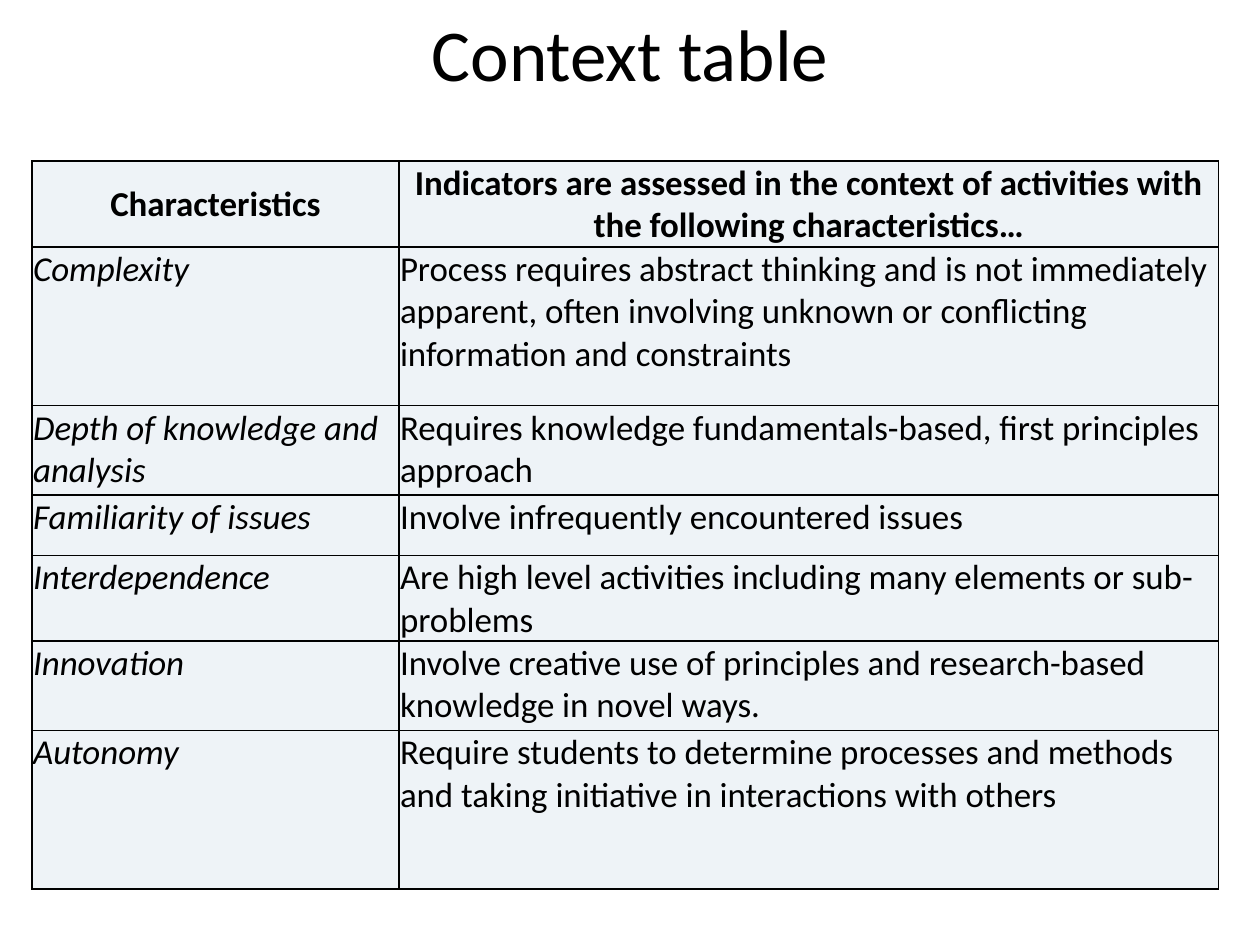
from pptx import Presentation
from pptx.dml.color import RGBColor
from pptx.enum.text import MSO_ANCHOR, PP_ALIGN
from pptx.oxml import parse_xml
from pptx.oxml.ns import nsdecls
from pptx.util import Cm, Inches, Pt

COLORS = {"text": "000000", "border": "000000", "cell": "EEF3F7"}
FONT = "Calibri"
COLS = [3.21, 7.17]
ROWS = [0.75, 1.39, 0.78, 0.53, 0.75, 0.78, 1.39]
CONTENT = [
    ("Characteristics",
     "Indicators are assessed in the context of activities with the following characteristics…"),
    ("Complexity",
     "Process requires abstract thinking and is not immediately apparent, "
     "often involving unknown or conflicting information and constraints"),
    ("Depth of knowledge and analysis",
     "Requires knowledge fundamentals-based, first principles approach"),
    ("Familiarity of issues", "Involve infrequently encountered issues"),
    ("Interdependence",
     "Are high level activities including many elements or sub-problems"),
    ("Innovation",
     "Involve creative use of principles and research-based knowledge in novel ways."),
    ("Autonomy",
     "Require students to determine processes and methods "
     "and taking initiative in interactions with others"),
]


def set_text(p, text, size):
    p.text = text
    p.font.name = FONT
    p.font.size = Pt(size)
    p.font.color.rgb = RGBColor.from_string(COLORS["text"])


def add_borders(cell):
    tcPr = cell._tc.get_or_add_tcPr()
    for i, side in enumerate(("lnL", "lnR", "lnT", "lnB")):
        tcPr.insert(i, parse_xml(
            f'<a:{side} {nsdecls("a")} w="{Pt(1)}"><a:solidFill>'
            f'<a:srgbClr val="{COLORS["border"]}"/></a:solidFill></a:{side}>'))


prs = Presentation()
prs.slide_width, prs.slide_height = Cm(28), Cm(21)
s = prs.slides.add_slide(prs.slide_layouts[6])

# Title, centred across the slide
margin = prs.slide_width * 0.05
sp = s.shapes.add_textbox(int(margin), Inches(0.04),
                          int(prs.slide_width - 2 * margin), Inches(1.14))
tf = sp.text_frame
tf.word_wrap = True
tf.vertical_anchor = MSO_ANCHOR.TOP
tf.margin_left = tf.margin_right = Inches(0.07)
tf.margin_top = tf.margin_bottom = Inches(0.03)
p = tf.paragraphs[0]
set_text(p, "Context table", 46)
p.alignment = PP_ALIGN.CENTER

# Table grid
table = s.shapes.add_table(len(ROWS), len(COLS), Inches(0.28), Inches(1.41),
                           Inches(sum(COLS)), Inches(sum(ROWS))).table
table.horz_banding = False
for column, width in zip(table.columns, COLS):
    column.width = Inches(width)
for row, height in zip(table.rows, ROWS):
    row.height = Inches(height)

# Cells: bold centred header, italic first column
for r, texts in enumerate(CONTENT):
    for c, text in enumerate(texts):
        cell = table.cell(r, c)
        cell.fill.solid()
        cell.fill.fore_color.rgb = RGBColor.from_string(COLORS["cell"])
        cell.margin_left = cell.margin_right = cell.margin_top = Inches(0.01)
        cell.margin_bottom = 0
        add_borders(cell)
        p = cell.text_frame.paragraphs[0]
        set_text(p, text, 22)
        p.font.bold = r == 0
        p.font.italic = r > 0 and c == 0
        p.alignment = PP_ALIGN.CENTER if r == 0 else PP_ALIGN.LEFT
table.cell(0, 0).vertical_anchor = MSO_ANCHOR.MIDDLE

prs.save("out.pptx")
